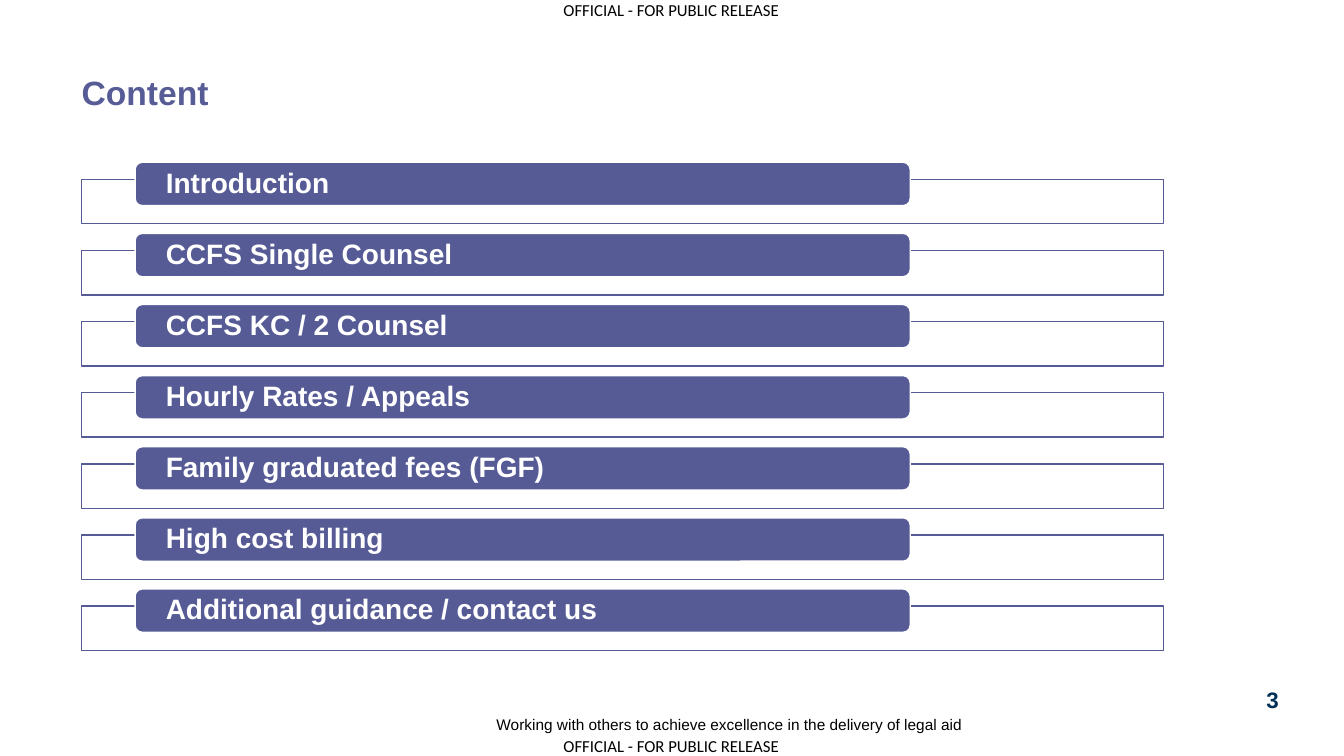
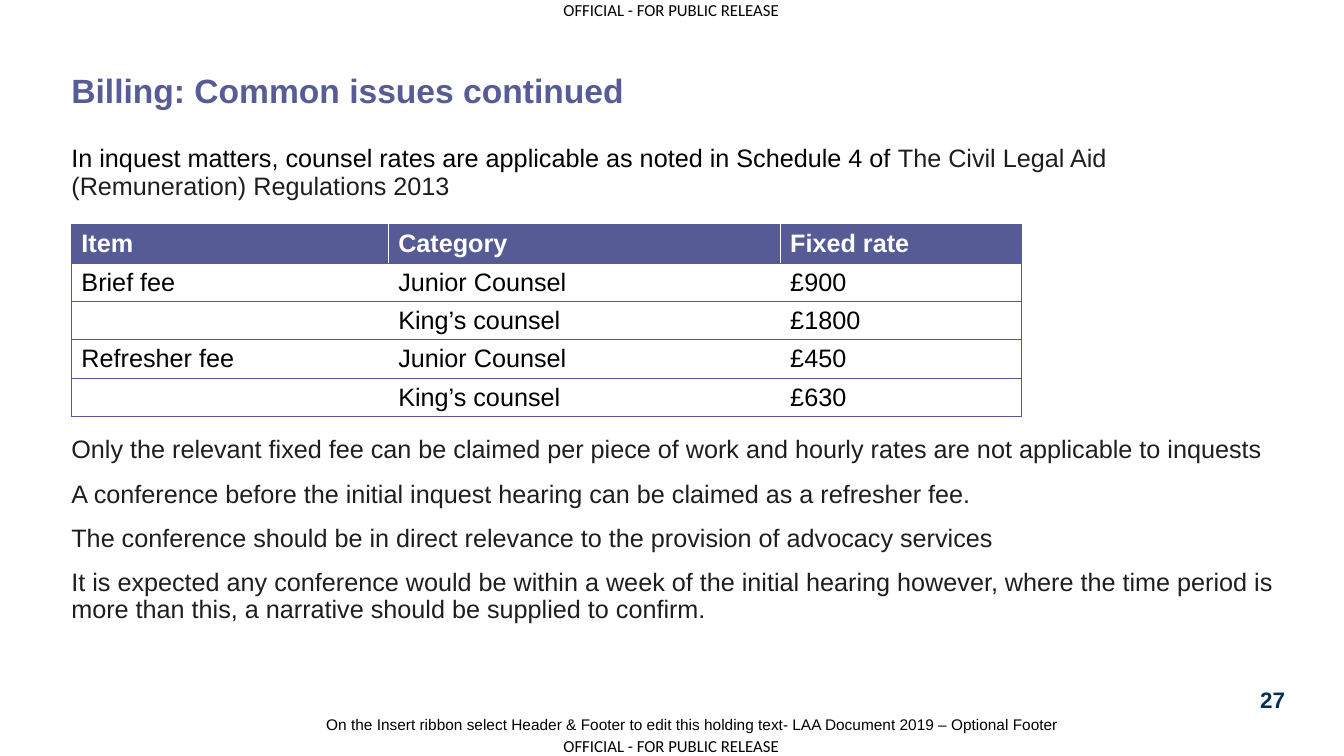
from dataclasses import dataclass

from lxml import etree
from pptx import Presentation
from pptx.dml.color import RGBColor
from pptx.enum import shapes, text
from pptx.oxml import ns
from pptx.util import Pt


@dataclass(frozen=True)
class Theme:
    title_ink: str = "575C96"
    accent: str = "565B96"
    white: str = "FFFFFF"
    black: str = "000000"
    body_ink: str = "1E1E1E"
    number_ink: str = "003057"
    face: str = "Arial"
    marking_face: str = "Calibri"
    title_size: float = 24
    agenda_size: float = 20
    body_size: float = 18
    number_size: float = 16
    marking_size: float = 12
    footer_size: float = 11
    line_spacing: float = 0.9


THEME = Theme()
SLIDE_WIDTH, SLIDE_HEIGHT = 960, 540
MARKING = "OFFICIAL - FOR PUBLIC RELEASE"

AGENDA = [
    "Introduction",
    "CCFS Single Counsel",
    "CCFS KC / 2 Counsel",
    "Hourly Rates / Appeals",
    "Family graduated fees (FGF)",
    "High cost billing",
    "Additional guidance / contact us",
]

RATES = [
    ("Item", "Category", "Fixed rate"),
    ("Brief fee", "Junior Counsel", "£900"),
    ("", "King’s counsel", "£1800"),
    ("Refresher fee", "Junior Counsel", "£450"),
    ("", "King’s counsel", "£630"),
]

INQUEST_INTRO = (
    ("In inquest matters, counsel rates are applicable as noted in Schedule 4 of ", THEME.black),
    ("The Civil Legal Aid (Remuneration) Regulations 2013", THEME.body_ink),
)
INQUEST_NOTES = [
    "Only the relevant fixed fee can be claimed per piece of work and hourly rates "
    "are not applicable to inquests",
    "A conference before the initial inquest hearing can be claimed as a refresher fee.",
    "The conference should be in direct relevance to the provision of advocacy services",
    "It is expected any conference would be within a week of the initial hearing however, "
    "where the time period is more than this, a narrative should be supplied to confirm.",
]


def rgb(code):
    return RGBColor.from_string(code)


def style_font(font, size, colour, bold=False, face=THEME.face):
    font.name, font.size, font.bold = face, Pt(size), bold
    font.color.rgb = rgb(colour)


def place(shape, left, top, width, height):
    shape.left, shape.top = Pt(left), Pt(top)
    shape.width, shape.height = Pt(width), Pt(height)


def set_frame(frame, anchor=text.MSO_ANCHOR.TOP, side_inset=0):
    frame.word_wrap = True
    frame.auto_size = text.MSO_AUTO_SIZE.NONE
    frame.vertical_anchor = anchor
    frame.margin_left = frame.margin_right = Pt(side_inset)
    frame.margin_top = frame.margin_bottom = 0


def add_label(slide, words, box, size, colour=THEME.black, bold=False, face=THEME.face,
              align=text.PP_ALIGN.LEFT, anchor=text.MSO_ANCHOR.TOP):
    label = slide.shapes.add_textbox(*map(Pt, box))
    set_frame(label.text_frame, anchor)
    line = label.text_frame.paragraphs[0]
    line.text, line.alignment = words, align
    style_font(line.font, size, colour, bold, face)


def add_titled_slide(prs, layout, title, left, top, number, footer, footer_right):
    """Add a slide with its title, protective markings, footer and number."""
    slide = prs.slides.add_slide(prs.slide_layouts.get_by_name(layout))
    heading = slide.shapes.title
    place(heading, left, top, 860, 27)
    set_frame(heading.text_frame)
    line = heading.text_frame.paragraphs[0]
    line.text, line.alignment = title, text.PP_ALIGN.LEFT
    line.line_spacing = THEME.line_spacing
    style_font(line.font, THEME.title_size, THEME.title_ink, bold=True)

    marking_height = 14.6
    for marking_top in (0, SLIDE_HEIGHT - marking_height):
        add_label(slide, MARKING, (402.5, marking_top, 160, marking_height),
                  THEME.marking_size, face=THEME.marking_face)
    footer_width = 536
    add_label(slide, footer, (footer_right - footer_width, 498, footer_width, 26),
              THEME.footer_size, align=text.PP_ALIGN.RIGHT, anchor=text.MSO_ANCHOR.BOTTOM)
    add_label(slide, number, (895, 490, 28, 20), THEME.number_size, THEME.number_ink,
              bold=True, align=text.PP_ALIGN.CENTER)
    return slide


def add_panel(slide, kind, box, fill, outline):
    panel = slide.shapes.add_shape(kind, *map(Pt, box))
    panel.shadow.inherit = False
    panel.fill.solid()
    panel.fill.fore_color.rgb = rgb(fill)
    panel.line.color.rgb = rgb(outline)
    panel.line.width = Pt(1)
    return panel


def add_agenda(slide, topics):
    first_top, pitch, tab_rise = 128.2, 50.8, 12.3
    for index, topic in enumerate(topics):
        top = first_top + index * pitch
        add_panel(slide, shapes.MSO_SHAPE.RECTANGLE, (58.3, top, 772.6, 31.7),
                  THEME.white, THEME.accent)
        tab = add_panel(slide, shapes.MSO_SHAPE.ROUNDED_RECTANGLE,
                        (96.5, top - tab_rise, 553.7, 31), THEME.accent, THEME.white)
        set_frame(tab.text_frame, text.MSO_ANCHOR.MIDDLE, side_inset=20.4)
        line = tab.text_frame.paragraphs[0]
        line.text, line.alignment = topic, text.PP_ALIGN.LEFT
        line.line_spacing = THEME.line_spacing
        style_font(line.font, THEME.agenda_size, THEME.white, bold=True)


def format_body_line(line, before, after):
    properties = line._p.get_or_add_pPr()
    properties.set("marL", "0")
    properties.set("indent", "0")
    etree.SubElement(properties, ns.qn("a:buNone"))
    line.line_spacing = THEME.line_spacing
    line.space_before, line.space_after = Pt(before), Pt(after)
    style_font(line.font, THEME.body_size, THEME.body_ink)


def fill_body(body, intro, notes, table_gap):
    """Write the intro, leave table_gap below it, then write the notes."""
    frame = body.text_frame
    set_frame(frame)
    opening = frame.paragraphs[0]
    format_body_line(opening, before=0, after=table_gap)
    for words, colour in intro:
        run = opening.add_run()
        run.text = words
        run.font.color.rgb = rgb(colour)
    for note in notes:
        line = frame.add_paragraph()
        line.text = note
        format_body_line(line, before=6, after=6)


def set_border(cell, side, colour, width):
    properties = cell._tc.get_or_add_tcPr()
    border = etree.SubElement(properties, ns.qn(f"a:ln{side}"), w=str(Pt(width)))
    solid = etree.SubElement(border, ns.qn("a:solidFill"))
    etree.SubElement(solid, ns.qn("a:srgbClr"), val=colour)


def add_rates_table(slide, rows, left, top, column_widths, row_height):
    table = slide.shapes.add_table(
        len(rows), len(column_widths), Pt(left), Pt(top),
        Pt(sum(column_widths)), Pt(row_height * len(rows))).table
    table.first_row = table.horz_banding = False
    for column, width in zip(table.columns, column_widths):
        column.width = Pt(width)
    outer, inner = (THEME.accent, 0.75), (THEME.white, 1)
    last = len(column_widths) - 1
    for r, row in enumerate(rows):
        table.rows[r].height = Pt(row_height)
        header = r == 0
        for c, words in enumerate(row):
            cell = table.cell(r, c)
            set_border(cell, "L", *(outer if c == 0 else inner))
            set_border(cell, "R", *(outer if c == last else inner))
            set_border(cell, "T", *outer)
            set_border(cell, "B", *outer)
            if header:
                cell.fill.solid()
                cell.fill.fore_color.rgb = rgb(THEME.accent)
            else:
                cell.fill.background()
            line = cell.text_frame.paragraphs[0]
            line.text = words
            style_font(line.font, THEME.body_size,
                       THEME.white if header else THEME.black, bold=header)


def main():
    prs = Presentation()
    prs.slide_width, prs.slide_height = Pt(SLIDE_WIDTH), Pt(SLIDE_HEIGHT)

    content = add_titled_slide(
        prs, "Title Only", "Content", 58.3, 54.7, "3",
        "Working with others to achieve excellence in the delivery of legal aid", 687.6)
    add_agenda(content, AGENDA)

    margin = 51
    billing = add_titled_slide(
        prs, "Title and Content", "Billing: Common issues continued", margin, 53.5, "27",
        "On the Insert ribbon select Header & Footer to edit this holding text- "
        "LAA Document 2019 – Optional Footer", 756.5)
    body = billing.placeholders[1]
    place(body, margin, 104.4, 867, 367)
    fill_body(body, INQUEST_INTRO, INQUEST_NOTES, table_gap=163)
    add_rates_table(billing, RATES, margin, 160.6, (226.3, 280, 172.4), 27.4)

    prs.save("out.pptx")


if __name__ == "__main__":
    main()
